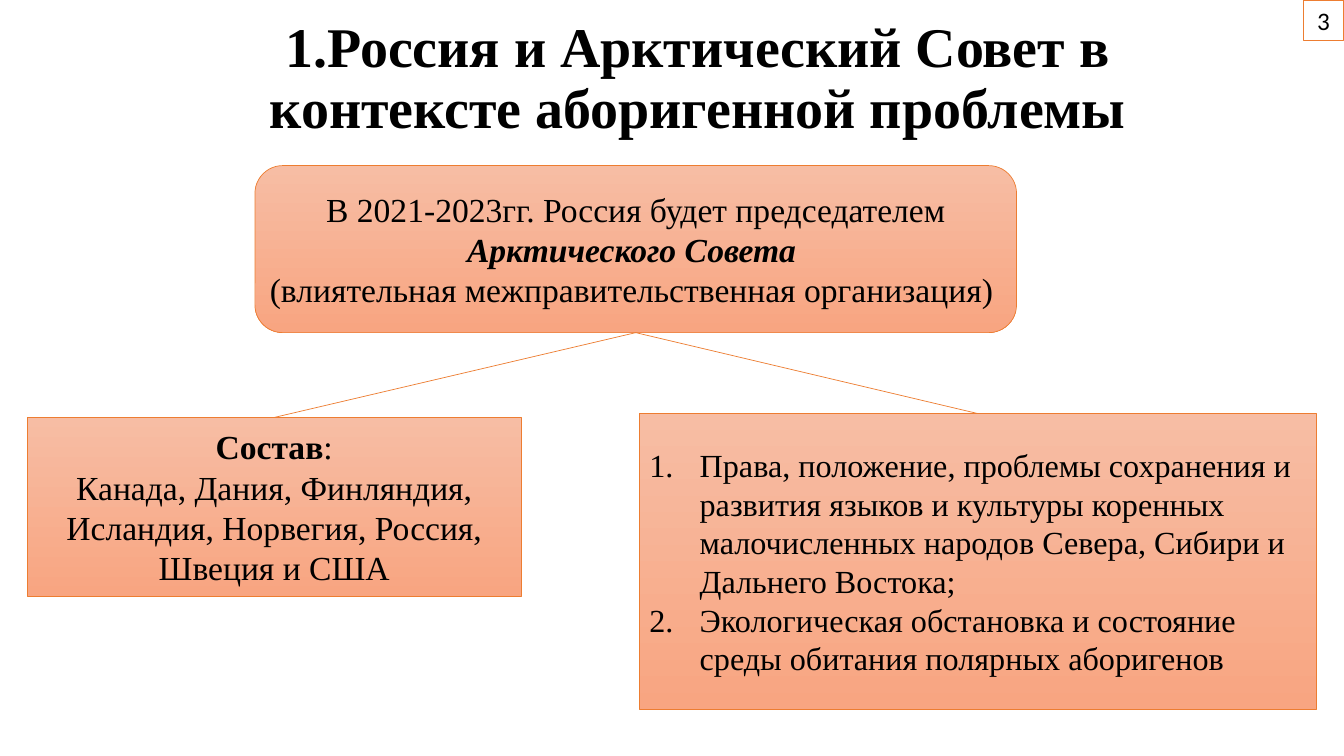
import pptx
import pptx.util
import pptx.dml.color
import pptx.enum.shapes
import pptx.enum.text
import pptx.oxml.ns
import lxml.etree

Pt = pptx.util.Pt
RGBColor = pptx.dml.color.RGBColor
SHAPE = pptx.enum.shapes.MSO_SHAPE
ALIGN = pptx.enum.text.PP_ALIGN
ANCHOR = pptx.enum.text.MSO_ANCHOR
qn = pptx.oxml.ns.qn

BLACK = RGBColor(0x00, 0x00, 0x00)
WHITE = RGBColor(0xFF, 0xFF, 0xFF)
ORANGE = RGBColor(0xED, 0x7D, 0x31)
PEACH_TOP = RGBColor(0xF7, 0xBD, 0xA4)
PEACH_BOTTOM = RGBColor(0xF8, 0xA5, 0x81)
SERIF = "Times New Roman"


def style_box(sp, side_inset=7.2):
    """Peach gradient, thin orange outline, text in the middle."""
    sp.fill.gradient()
    sp.fill.gradient_angle = 270
    for stop, color in zip(sp.fill.gradient_stops, (PEACH_TOP, PEACH_BOTTOM)):
        stop.color.rgb = color
    sp.line.color.rgb = ORANGE
    sp.line.width = Pt(0.5)
    tf = sp.text_frame
    tf.word_wrap = True
    tf.auto_size = pptx.enum.text.MSO_AUTO_SIZE.NONE
    tf.vertical_anchor = ANCHOR.MIDDLE
    tf.margin_left = tf.margin_right = Pt(side_inset)


def add_paragraph(tf, first, runs, size, align=ALIGN.CENTER, font=SERIF):
    """Runs are (text, bold, italic)."""
    p = tf.paragraphs[0] if first else tf.add_paragraph()
    p.alignment = align
    p.space_before = Pt(0)
    for text, bold, italic in runs:
        r = p.add_run()
        r.text = text
        r.font.name = font
        r.font.size = Pt(size)
        r.font.bold = bold
        r.font.italic = italic
        r.font.color.rgb = BLACK
    return p


prs = pptx.Presentation()
prs.slide_width, prs.slide_height = Pt(960.48), Pt(540)
s = prs.slides.add_slide(prs.slide_layouts[1])
title, goals = s.placeholders

# Title
title.left, title.top, title.width, title.height = Pt(103.7), Pt(5), Pt(789.8), Pt(104)
tf = title.text_frame
tf.word_wrap = True
tf.auto_size = pptx.enum.text.MSO_AUTO_SIZE.NONE
tf.vertical_anchor = ANCHOR.MIDDLE
p = add_paragraph(tf, True, [
    ("1.Россия и Арктический Совет в контексте аборигенной проблемы", True, False)], 40)
p.line_spacing = 0.9

# Council and its members
council = s.shapes.add_shape(
    SHAPE.ROUNDED_RECTANGLE, Pt(182.2), Pt(118.3), Pt(544.3), Pt(119.3))
members = s.shapes.add_shape(SHAPE.RECTANGLE, Pt(19.4), Pt(298.2), Pt(353.2), Pt(127.8))
boxes = [
    (council, 4, [
        [("В 2021-2023гг. Россия будет председателем ", False, False),
         ("Арктического Совета ", True, True)],
        [("(влиятельная межправительственная организация) ", False, False)]]),
    (members, 7.2, [
        [("Состав", True, False), (":", False, False)],
        [("Канада, Дания, Финляндия, Исландия, Норвегия, Россия, Швеция и США",
          False, False)]]),
]
for sp, inset, paragraphs in boxes:
    sp.shadow.inherit = False
    style_box(sp, inset)
    for i, runs in enumerate(paragraphs):
        add_paragraph(sp.text_frame, i == 0, runs, 24)

# Numbered list of issues
goals.left, goals.top, goals.width, goals.height = Pt(456.8), Pt(295.4), Pt(484), Pt(211)
style_box(goals)
issues = [
    "Права, положение, проблемы сохранения и развития языков и культуры коренных "
    "малочисленных народов Севера, Сибири и Дальнего Востока;",
    "Экологическая обстановка и состояние среды обитания полярных аборигенов",
]
for i, text in enumerate(issues):
    p = add_paragraph(goals.text_frame, i == 0, [(text, False, False)], 23, ALIGN.LEFT)
    pPr = p._p.get_or_add_pPr()
    pPr.set("marL", str(Pt(36)))
    pPr.set("indent", str(-Pt(36)))
    bu_font = lxml.etree.SubElement(pPr, qn("a:buFont"))
    bu_font.set("typeface", SERIF)
    lxml.etree.SubElement(pPr, qn("a:buAutoNum")).set("type", "arabicPeriod")

# Lines from the council to the lower boxes
for box in (members, goals):
    line = s.shapes.add_connector(
        pptx.enum.shapes.MSO_CONNECTOR.STRAIGHT,
        council.left + council.width // 2, council.top + council.height,
        box.left + box.width // 2, box.top)
    line.line.color.rgb = ORANGE
    line.line.width = Pt(0.5)
    lxml.etree.SubElement(line._element.spPr, qn("a:effectLst"))

# Page number
number = s.shapes.add_shape(SHAPE.RECTANGLE, Pt(931.7), Pt(0), Pt(28.4), Pt(29))
number.shadow.inherit = False
number.fill.solid()
number.fill.fore_color.rgb = WHITE
number.line.color.rgb = ORANGE
number.line.width = Pt(1)
number.text_frame.vertical_anchor = ANCHOR.TOP
add_paragraph(number.text_frame, True, [("3", False, False)], 18, font="Calibri")

prs.save("out.pptx")
